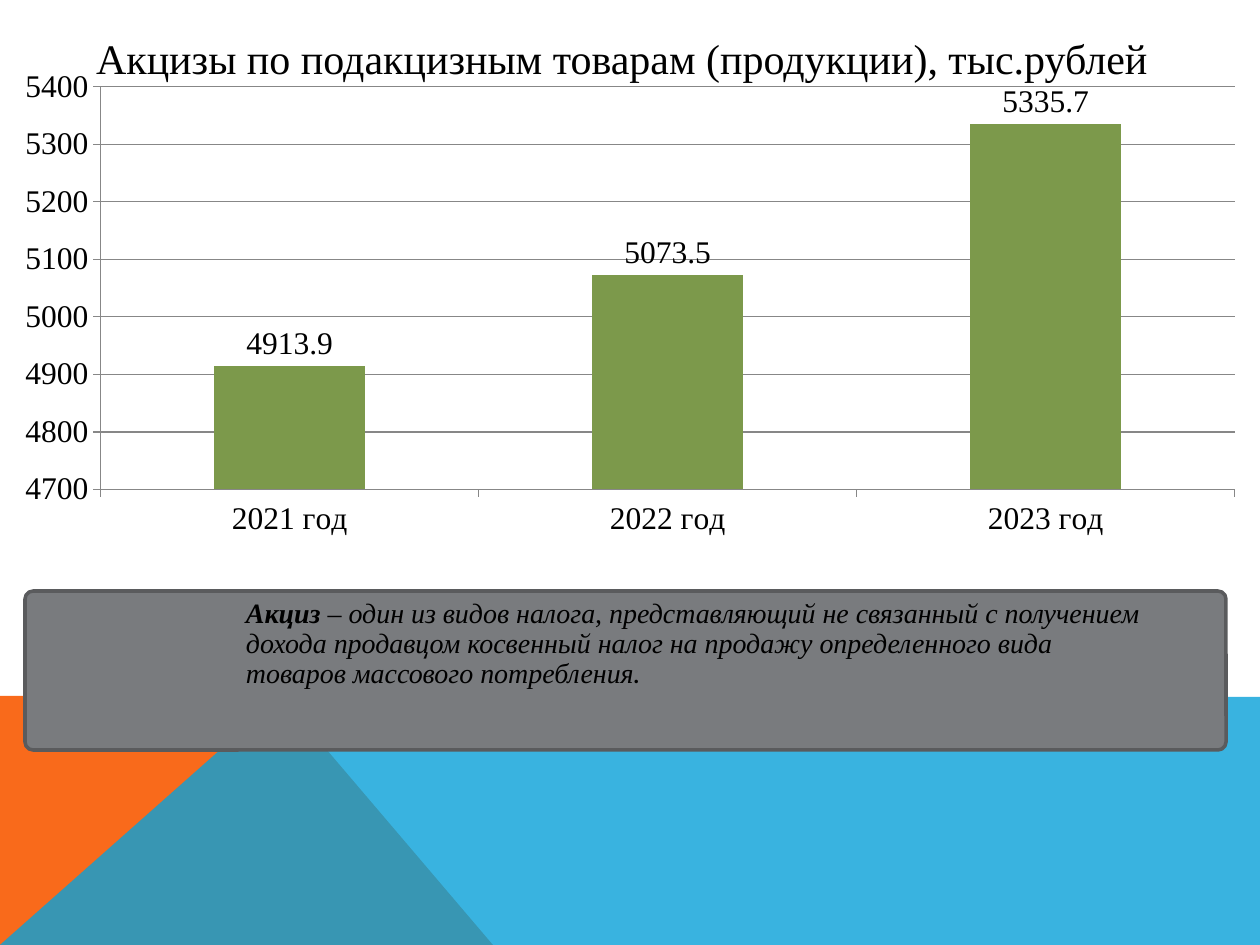
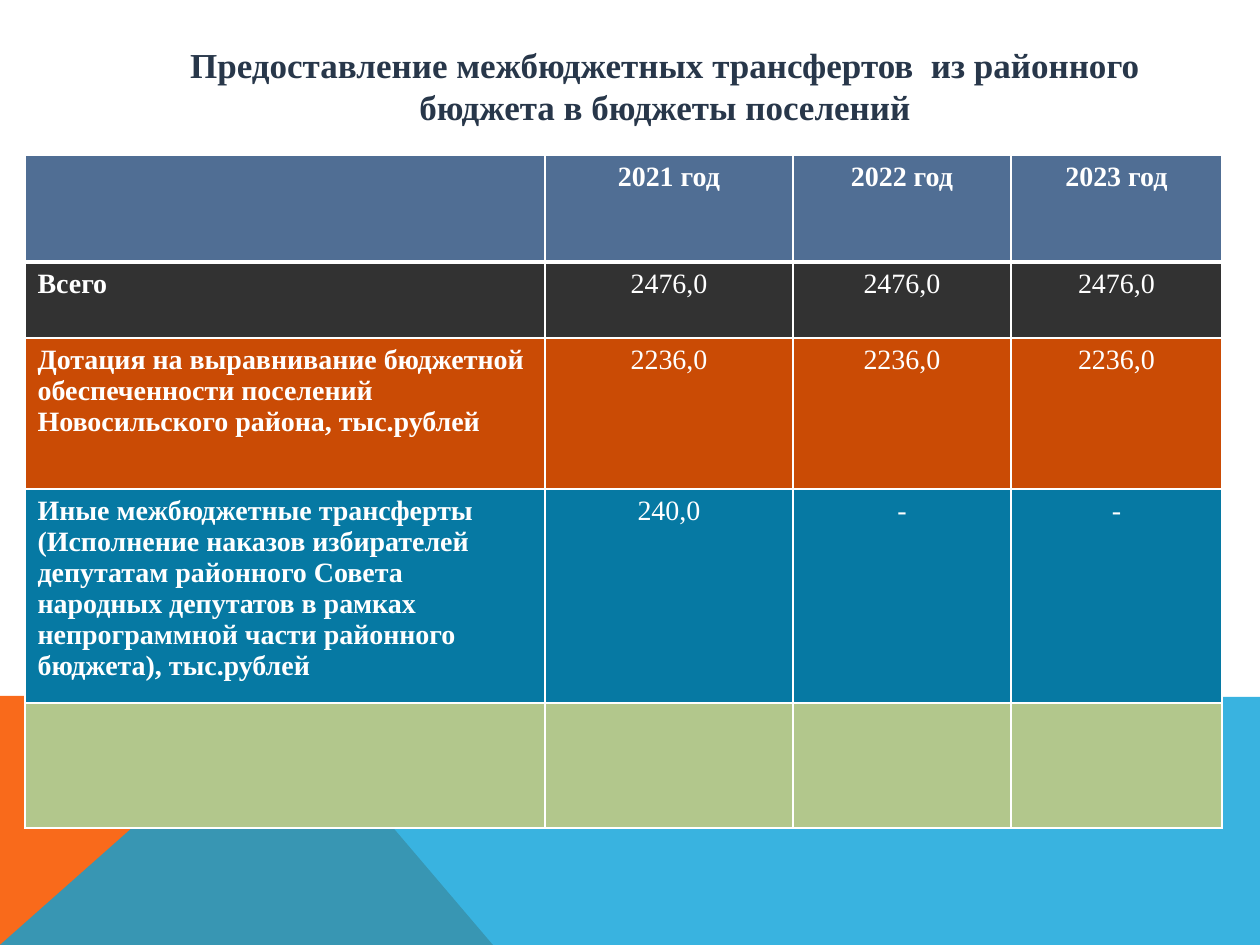
from lxml.etree import SubElement
from pptx import Presentation
from pptx.chart.data import CategoryChartData
from pptx.dml.color import RGBColor
from pptx.enum.chart import XL_CHART_TYPE, XL_LABEL_POSITION, XL_TICK_MARK
from pptx.enum.shapes import MSO_SHAPE
from pptx.enum.text import MSO_ANCHOR, MSO_AUTO_SIZE, PP_ALIGN
from pptx.oxml import parse_xml
from pptx.oxml.ns import nsdecls, qn
from pptx.util import Emu, Pt

SERIF = "Times New Roman"
BLACK, WHITE = "000000", "FFFFFF"
ORANGE, SKY = "F96A1B", "08A1D9"
GREEN, GRID = "7C994B", "878787"
GREY, EDGE = "797B7E", "5A5B5D"
NAVY = "28374A"
YEARS = ["2021 год", "2022 год", "2023 год"]


def px(size):
    return Emu(round(size * 914400 / 126))


def color(code):
    return RGBColor.from_string(code)


def paint(part, code):
    part.fill.solid()
    part.fill.fore_color.rgb = color(code)


def style(font, size, code, name=SERIF, bold=False, italic=False):
    font.name = name
    font.size = Pt(size)
    font.color.rgb = color(code)
    font.bold = bold
    font.italic = italic


def write(para, text, *look, **flags):
    run = para.add_run()
    run.text = text
    style(run.font, *look, **flags)


def place(shape, box):
    shape.left, shape.top, shape.width, shape.height = map(px, box)


def band(slide, box, points, code, alpha=None):
    left, top = box
    spots = [(px(left + x), px(top + y)) for x, y in points]
    draft = slide.shapes.build_freeform(*spots[0])
    draft.add_line_segments(spots[1:])
    shape = draft.convert_to_shape()
    shape.shadow.inherit = False
    shape.line.fill.background()
    paint(shape, code)
    if alpha:
        tint = shape.element.spPr.find(".//" + qn("a:srgbClr"))
        SubElement(tint, qn("a:alpha"), val=str(alpha * 1000))
    return shape


def backdrop(slide):
    base = (0, 696)
    wedge = band(slide, base, [(0, 249), (0, 0), (281, 0), (493, 249)], ORANGE)
    sweep = band(slide, base, [(0, 249), (281, 0), (1260, 1), (1260, 249)], SKY, 80)
    for shape in (wedge, sweep):
        slide.slide_layout.shapes.element.append(shape.element)


def heading(slide, box, text, size, code, bold=False):
    title = slide.shapes.title
    place(title, box)
    frame = title.text_frame
    frame.word_wrap = True
    frame.auto_size = MSO_AUTO_SIZE.NONE
    frame.vertical_anchor = MSO_ANCHOR.TOP
    para = frame.paragraphs[0]
    para.alignment = PP_ALIGN.CENTER
    write(para, text, size, code, bold=bold)


def fit_plot(chart, x, y, w, h):
    area = chart.element.find(".//" + qn("c:plotArea"))
    for old in area.findall(qn("c:layout")):
        area.remove(old)
    area.insert(0, parse_xml(
        f'<c:layout {nsdecls("c")}><c:manualLayout><c:layoutTarget val="inner"/>'
        '<c:xMode val="edge"/><c:yMode val="edge"/>'
        f'<c:x val="{x}"/><c:y val="{y}"/><c:w val="{w}"/><c:h val="{h}"/>'
        '</c:manualLayout></c:layout>'))


def bars(slide, box):
    data = CategoryChartData()
    data.categories = YEARS
    data.add_series("Series 1", [4913.9, 5073.5, 5335.7])
    chart = slide.shapes.add_chart(
        XL_CHART_TYPE.COLUMN_CLUSTERED, *map(px, box), data).chart
    chart.has_legend = chart.has_title = False
    style(chart.font, 18, BLACK)
    fit_plot(chart, 0.08, 0.055, 0.9, 0.827)

    for axis in (chart.category_axis, chart.value_axis):
        axis.major_tick_mark = XL_TICK_MARK.OUTSIDE
        axis.minor_tick_mark = XL_TICK_MARK.NONE
        axis.format.line.color.rgb = color(GRID)
        style(axis.tick_labels.font, 18, BLACK)
    scale = chart.value_axis
    scale.minimum_scale, scale.maximum_scale = 4700, 5400
    scale.major_unit = 100
    scale.has_major_gridlines = True
    scale.major_gridlines.format.line.color.rgb = color(GRID)

    plot = chart.plots[0]
    plot.gap_width = 150
    plot.vary_by_categories = False
    paint(plot.series[0].format, GREEN)
    plot.has_data_labels = True
    labels = plot.data_labels
    labels.show_value = True
    labels.position = XL_LABEL_POSITION.OUTSIDE_END
    style(labels.font, 18, BLACK)


def panel(slide, box):
    left, top, width, height = box
    group = slide.shapes.add_group_shape()
    card = group.shapes.add_shape(MSO_SHAPE.ROUNDED_RECTANGLE, *map(px, box))
    card.adjustments[0] = 0.05
    card.shadow.inherit = False
    paint(card, GREY)
    card.line.color.rgb = color(EDGE)
    card.line.width = Pt(2)

    note = group.shapes.add_textbox(px(left + 221), px(top), px(895), px(height))
    frame = note.text_frame
    frame.word_wrap = True
    frame.margin_left = frame.margin_right = frame.margin_bottom = 0
    frame.margin_top = px(8)
    para = frame.paragraphs[0]
    para.line_spacing = 0.9
    write(para, "Акциз", 16, BLACK, bold=True, italic=True)
    write(para, " – один из видов налога, представляющий не связанный с "
          "получением дохода продавцом косвенный налог на продажу "
          "определенного вида товаров массового потребления",
          16, BLACK, italic=True)
    write(para, ".", 16, BLACK, "Lato", italic=True)


def border(cell, side, width):
    return parse_xml(
        f'<a:{side} {nsdecls("a")} w="{Pt(width)}"><a:solidFill>'
        f'<a:srgbClr val="{WHITE}"/></a:solidFill></a:{side}>')


def fill_cell(cell, text, row, col, code):
    paint(cell, code)
    props = cell._tc.get_or_add_tcPr()
    widths = {"lnL": 1, "lnR": 1, "lnT": 3 if row == 1 else 1,
              "lnB": 3 if row == 0 else 1}
    for spot, (side, width) in enumerate(widths.items()):
        props.insert(spot, border(cell, side, width))
    if text:
        para = cell.text_frame.paragraphs[0]
        para.alignment = PP_ALIGN.CENTER if col else PP_ALIGN.LEFT
        write(para, text, 16, WHITE, bold=row == 0 or col == 0)


def grid(slide, box):
    rows = [
        (107, "506E94", ["", *YEARS]),
        (76, "323232", ["Всего"] + ["2476,0"] * 3),
        (151, "CA4B05", ["Дотация на выравнивание бюджетной обеспеченности "
                         "поселений Новосильского района, тыс.рублей"]
         + ["2236,0"] * 3),
        (214, "0679A3", ["Иные межбюджетные трансферты (Исполнение наказов "
                         "избирателей депутатам районного Совета народных "
                         "депутатов в рамках непрограммной части районного "
                         "бюджета), тыс.рублей", "240,0", "-", "-"]),
        (125, "B2C78C", [""] * 4),
    ]
    table = slide.shapes.add_table(len(rows), 4, *map(px, box)).table
    for column, width in zip(table.columns, (520, 248, 218, 211)):
        column.width = px(width)
    for row, (height, code, texts) in enumerate(rows):
        table.rows[row].height = px(height)
        for col, text in enumerate(texts):
            fill_cell(table.cell(row, col), text, row, col, code)


def excise(slide):
    heading(slide, (34, 26, 1176, 64),
            "Акцизы по подакцизным товарам (продукции), тыс.рублей", 24, BLACK)
    bars(slide, (0, 60, 1260, 487))
    panel(slide, (25, 591, 1201, 159))


def grants(slide):
    heading(slide, (134, 37, 1062, 97),
            "Предоставление межбюджетных трансфертов  из районного "
            "бюджета в бюджеты поселений", 20, NAVY, bold=True)
    grid(slide, (25, 155, 1197, 673))


def main():
    deck = Presentation()
    deck.slide_width, deck.slide_height = px(1260), px(945)
    layout = deck.slide_layouts[5]
    first, second = (deck.slides.add_slide(layout) for _ in range(2))
    backdrop(first)
    excise(first)
    grants(second)
    deck.save("out.pptx")


if __name__ == "__main__":
    main()
